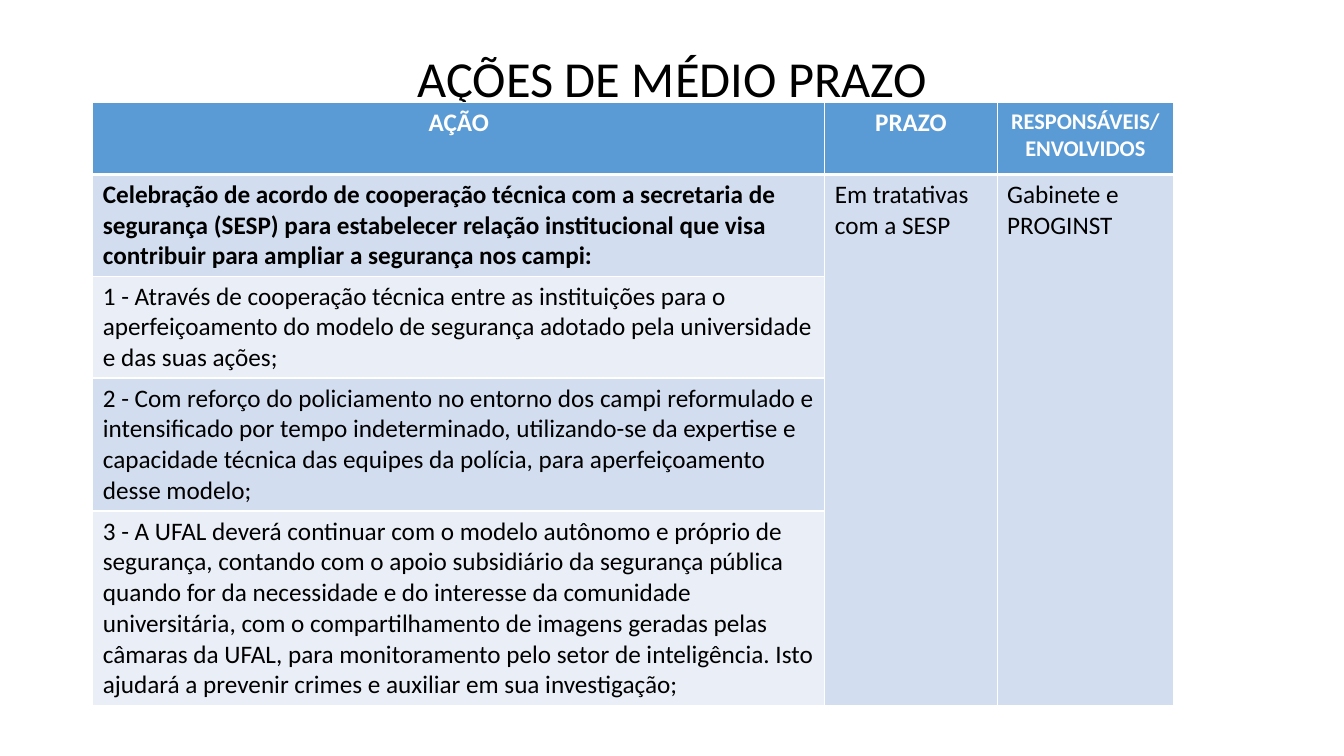
from lxml.etree import SubElement
from pptx import Presentation
from pptx.dml.color import RGBColor
from pptx.enum.text import MSO_ANCHOR, PP_ALIGN
from pptx.oxml.ns import qn
from pptx.util import Inches, Pt

TITLE = "AÇÕES DE MÉDIO PRAZO"
HEADINGS = [("AÇÃO", 18), ("PRAZO", 18), ("RESPONSÁVEIS/ENVOLVIDOS", 16)]
ACTIONS = [
    "Celebração de acordo de cooperação técnica com a secretaria de segurança (SESP) "
    "para estabelecer relação institucional que visa contribuir para ampliar a "
    "segurança nos campi:",
    "1 - Através de cooperação técnica entre as instituições para o aperfeiçoamento "
    "do modelo de segurança adotado pela universidade e das suas ações;",
    "2 - Com reforço do policiamento no entorno dos campi reformulado e intensificado "
    "por tempo indeterminado, utilizando-se da expertise e capacidade técnica das "
    "equipes da polícia, para aperfeiçoamento desse modelo;",
    "3 - A UFAL deverá continuar com o modelo autônomo e próprio de segurança, contando "
    "com o apoio subsidiário da segurança pública quando for da necessidade e do "
    "interesse da comunidade universitária, com o compartilhamento de imagens geradas "
    "pelas câmaras da UFAL, para monitoramento pelo setor de inteligência. Isto ajudará "
    "a prevenir crimes e auxiliar em sua investigação;",
]
DEADLINE = "Em tratativas com a SESP"
RESPONSIBLE = "Gabinete e PROGINST"

FONT = "Calibri"
BLACK = RGBColor(0x00, 0x00, 0x00)
WHITE = RGBColor(0xFF, 0xFF, 0xFF)
HEADER_BLUE = RGBColor(0x5B, 0x9B, 0xD5)
BANDS = [RGBColor(0xD2, 0xDE, 0xEF), RGBColor(0xEA, 0xEF, 0xF7)]

LEFT, TITLE_TOP, TABLE_TOP = 0.92, 0.4, 1.02
TITLE_WIDTH, TITLE_HEIGHT = 11.5, 0.82
COLUMNS = [7.26, 1.71, 1.75]
ROWS = [0.71, 1.01, 1.01, 1.32, 1.93]


def write(frame, text, size, color, bold=False, align=PP_ALIGN.LEFT):
    frame.text = text
    paragraph = frame.paragraphs[0]
    paragraph.alignment = align
    font = paragraph.runs[0].font
    font.name, font.size, font.bold = FONT, Pt(size), bold
    font.color.rgb = color
    return paragraph


def paint(cell, color, bottom_width=1):
    """Give a cell white borders and a solid fill; the borders must come first."""
    properties = cell._tc.get_or_add_tcPr()
    for side, width in (("L", 1), ("R", 1), ("T", 1), ("B", bottom_width)):
        line = SubElement(properties, qn(f"a:ln{side}"), w=str(Pt(width)))
        solid = SubElement(line, qn("a:solidFill"))
        SubElement(solid, qn("a:srgbClr"), val=str(WHITE))
    cell.fill.solid()
    cell.fill.fore_color.rgb = color


def add_title(slide):
    box = slide.shapes.add_textbox(Inches(LEFT), Inches(TITLE_TOP),
                                   Inches(TITLE_WIDTH), Inches(TITLE_HEIGHT))
    frame = box.text_frame
    frame.word_wrap = True
    frame.vertical_anchor = MSO_ANCHOR.MIDDLE
    write(frame, TITLE, 36, BLACK, align=PP_ALIGN.CENTER).line_spacing = 0.9


def add_action_table(slide):
    table = slide.shapes.add_table(
        len(ROWS), len(COLUMNS), Inches(LEFT), Inches(TABLE_TOP),
        Inches(sum(COLUMNS)), Inches(sum(ROWS))).table
    for column, width in zip(table.columns, COLUMNS):
        column.width = Inches(width)
    for row, height in zip(table.rows, ROWS):
        row.height = Inches(height)

    for col, (heading, size) in enumerate(HEADINGS):
        cell = table.cell(0, col)
        paint(cell, HEADER_BLUE, bottom_width=3)
        write(cell.text_frame, heading, size, WHITE, True, PP_ALIGN.CENTER)

    for row, action in enumerate(ACTIONS, start=1):
        cell = table.cell(row, 0)
        paint(cell, BANDS[(row - 1) % 2])
        write(cell.text_frame, action, 18, BLACK, bold=row == 1)
        for col in range(1, len(COLUMNS)):
            paint(table.cell(row, col), BANDS[0])

    for col, text in enumerate([DEADLINE, RESPONSIBLE], start=1):
        cell = table.cell(1, col)
        cell.merge(table.cell(len(ACTIONS), col))
        write(cell.text_frame, text, 18, BLACK)


def main():
    deck = Presentation()
    deck.slide_width, deck.slide_height = Inches(13.33), Inches(7.5)
    slide = deck.slides.add_slide(deck.slide_layouts[6])
    add_title(slide)
    add_action_table(slide)
    deck.save("out.pptx")


if __name__ == "__main__":
    main()
